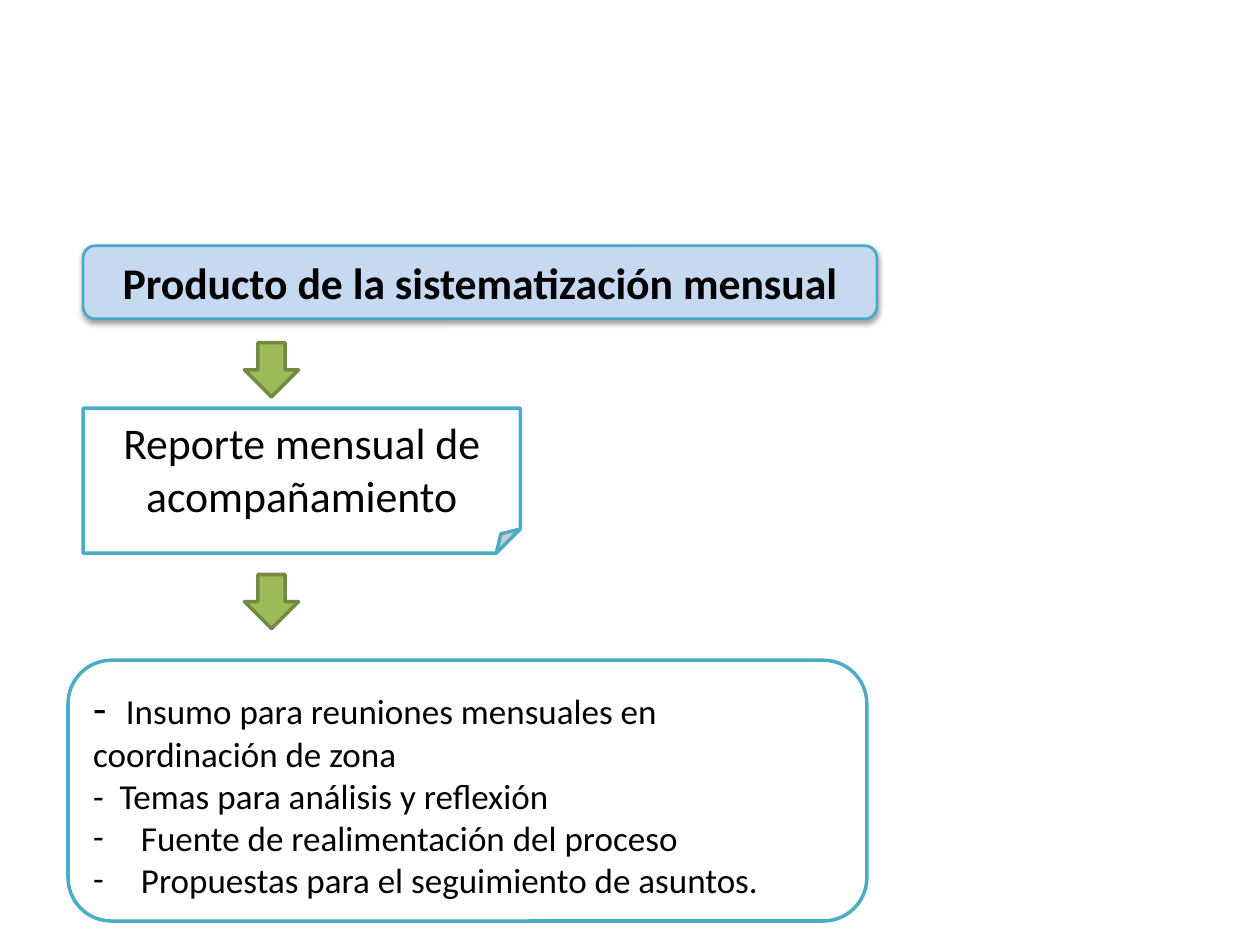
from lxml.etree import SubElement
from pptx import Presentation
from pptx.dml.color import RGBColor
from pptx.enum.shapes import MSO_SHAPE
from pptx.enum.text import MSO_ANCHOR, PP_ALIGN
from pptx.oxml.ns import qn
from pptx.util import Inches, Pt

BLACK = RGBColor(0x00, 0x00, 0x00)
WHITE = RGBColor(0xFF, 0xFF, 0xFF)
PALE_BLUE = RGBColor(0xC6, 0xD9, 0xF1)
TITLE_LINE = RGBColor(0x46, 0xAA, 0xC5)
TEAL = RGBColor(0x4B, 0xAC, 0xC6)
GREEN = RGBColor(0x9B, 0xBB, 0x59)
DARK_GREEN = RGBColor(0x73, 0x8A, 0x42)
LARGE, SMALL = 25, 20


def add_text(paragraph, text, size=LARGE, bold=False, color=BLACK, font="Calibri"):
    run = paragraph.add_run()
    run.text = text
    run.font.name = font
    run.font.size = Pt(size)
    run.font.bold = bold
    run.font.color.rgb = color


class FlowSlide:
    """Holds the style and the current slide of a vertical flow."""

    def __init__(self, presentation):
        self.slide = presentation.slides.add_slide(presentation.slide_layouts[6])

    def box(self, kind, left, top, width, height, fill=WHITE, line=TEAL, line_width=2):
        shape = self.slide.shapes.add_shape(
            kind, Inches(left), Inches(top), Inches(width), Inches(height))
        shape.shadow.inherit = False
        shape.fill.solid()
        shape.fill.fore_color.rgb = fill
        shape.line.color.rgb = line
        shape.line.width = Pt(line_width)
        shape.text_frame.word_wrap = True
        shape.text_frame.vertical_anchor = MSO_ANCHOR.MIDDLE
        return shape

    def label(self, shape, text, **text_format):
        paragraph = shape.text_frame.paragraphs[0]
        paragraph.alignment = PP_ALIGN.CENTER
        add_text(paragraph, text, **text_format)

    def soft_shadow(self, shape):
        effects = shape._element.spPr.find(qn("a:effectLst"))
        shadow = SubElement(effects, qn("a:outerShdw"), blurRad=str(Pt(3.1)),
                            dist=str(Pt(1.6)), dir="5400000", rotWithShape="0")
        color = SubElement(shadow, qn("a:srgbClr"), val=str(BLACK))
        SubElement(color, qn("a:alpha"), val="38000")

    def arrow(self, top):
        self.box(MSO_SHAPE.DOWN_ARROW, 1.94, top, 0.43, 0.43, GREEN, DARK_GREEN)

    def paragraph(self, shape, first=False):
        frame = shape.text_frame
        paragraph = frame.paragraphs[0] if first else frame.add_paragraph()
        paragraph.alignment = PP_ALIGN.LEFT
        return paragraph

    def dash_line(self, shape, lines, tab, dash_size=SMALL, first=False):
        paragraph = self.paragraph(shape, first)
        tabs = SubElement(paragraph._p.get_or_add_pPr(), qn("a:tabLst"))
        SubElement(tabs, qn("a:tab"), pos=str(Inches(tab)), algn="l")
        add_text(paragraph, "-\t", size=dash_size)
        for index, line in enumerate(lines):
            if index:
                paragraph.add_line_break()
            add_text(paragraph, line, size=SMALL)

    def bullet(self, shape, text):
        paragraph = self.paragraph(shape)
        properties = paragraph._p.get_or_add_pPr()
        properties.set("marL", str(Inches(0.38)))
        properties.set("indent", str(Inches(-0.38)))
        SubElement(properties, qn("a:buFont"), typeface="Calibri")
        SubElement(properties, qn("a:buChar"), char="-")
        add_text(paragraph, text, size=SMALL)


def main():
    presentation = Presentation()
    presentation.slide_width = Inches(10)
    presentation.slide_height = Inches(7.5)
    flow = FlowSlide(presentation)

    product = flow.box(MSO_SHAPE.FLOWCHART_ALTERNATE_PROCESS, 0.66, 1.95, 6.3, 0.58,
                       PALE_BLUE, TITLE_LINE, 1.5)
    flow.soft_shadow(product)
    flow.label(product, "Producto de la sistematización mensual", bold=True)

    report = flow.box(MSO_SHAPE.FOLDED_CORNER, 0.66, 3.24, 3.47, 1.15)
    flow.label(report, "Reporte mensual de acompañamiento")

    uses = flow.box(MSO_SHAPE.FLOWCHART_ALTERNATE_PROCESS, 0.54, 5.24, 6.34, 2.07)
    flow.dash_line(uses, ["Insumo para reuniones mensuales en", "coordinación de zona"],
                   tab=0.26, dash_size=LARGE, first=True)
    flow.dash_line(uses, ["Temas para análisis y reflexión"], tab=0.21)
    for text in ("Fuente de realimentación del proceso",
                 "Propuestas para el seguimiento de asuntos."):
        flow.bullet(uses, text)

    for top in (2.72, 4.56):
        flow.arrow(top)

    presentation.save("out.pptx")


if __name__ == "__main__":
    main()
